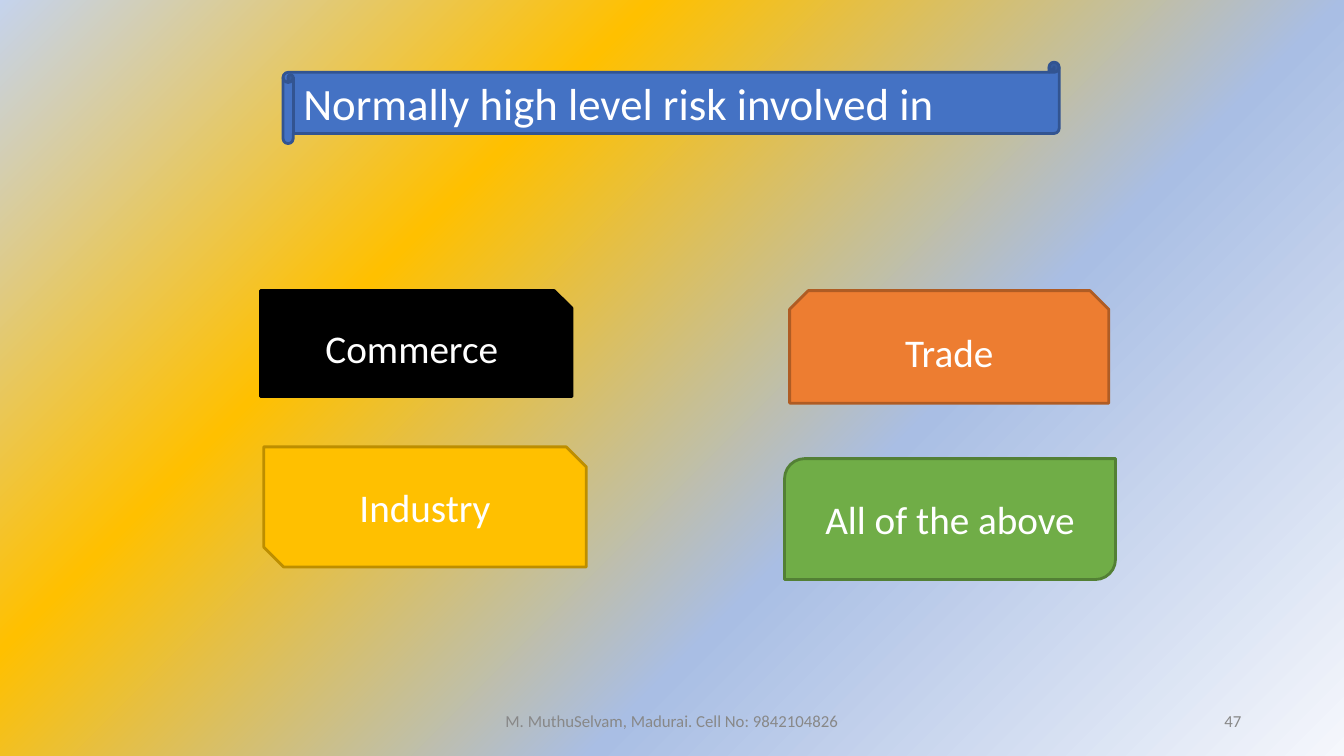
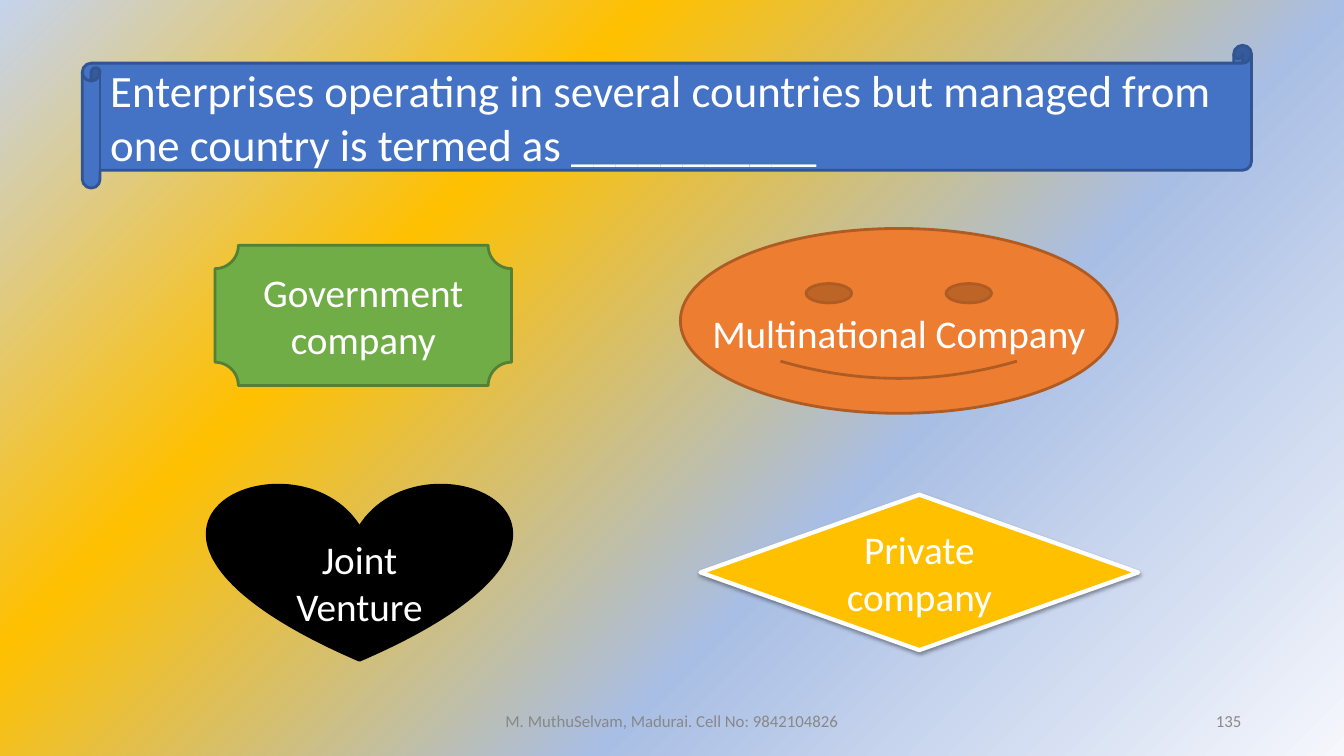
"""Build two quiz slides, each with a scroll title and four answer shapes."""
from copy import deepcopy

from lxml import etree
from pptx import Presentation
from pptx import util as u
from pptx.dml.color import RGBColor
from pptx.enum import shapes, text
from pptx.oxml.ns import nsdecls

KIND = shapes.MSO_SHAPE
ALIGN = text.PP_ALIGN
HUE = {
    "white": "FFFFFF", "black": "000000", "grey": "888888",
    "blue": "4472C4", "navy": "325491", "orange": "ED7D31", "rust": "AF5C24",
    "gold": "FFC000", "bronze": "BD8E00", "green": "70AD47", "moss": "538035",
}
BLEND = {0: "F5F7FC", 36: "A9BEE4", 69: "FFC000", 100: "C5D3ED"}
COLS, ROWS = 160, 90
CELL = u.Inches(7.5) // ROWS
FOOT = "M. MuthuSelvam, Madurai. Cell No: 9842104826"
STYLE = {
    "title": {"size": 32, "hue": "white", "align": ALIGN.LEFT},
    "answer": {"size": 28, "hue": "white", "align": ALIGN.CENTER},
    "foot": {"size": 12, "hue": "grey", "align": ALIGN.CENTER},
    "page": {"size": 12, "hue": "grey", "align": ALIGN.RIGHT},
}
FRAME = {
    "word_wrap": True, "auto_size": text.MSO_AUTO_SIZE.NONE,
    "vertical_anchor": text.MSO_ANCHOR.MIDDLE,
    "margin_left": u.Inches(0.1), "margin_right": u.Inches(0.1),
    "margin_top": u.Inches(0.05), "margin_bottom": u.Inches(0.05),
}
SLIDES = [
    {
        "page": "47", "title": "Normally high level risk involved in",
        "scroll": (33.7, 7.4, 92.4, 9.7),
        "answers": [
            ("Commerce", KIND.SNIP_1_RECTANGLE, "black", "black", 2, (31, 34.6, 37.1, 12.6), 0.05),
            ("Trade", KIND.SNIP_2_SAME_RECTANGLE, "orange", "rust", 2, (94, 34.6, 38, 13.4), 0.05),
            ("Industry", KIND.SNIP_2_DIAG_RECTANGLE, "gold", "bronze", 2, (31.4, 53.2, 38.4, 14.3), 0.05),
            ("All of the above", KIND.ROUND_2_DIAG_RECTANGLE, "green", "moss", 2, (93.4, 54.6, 39.4, 14.4), 0.05),
        ],
    },
    {
        "page": "135",
        "title": "Enterprises operating in several countries but managed from "
                 "one country is termed as ___________",
        "scroll": (9.8, 5.4, 139.2, 17),
        "answers": [
            ("Government company", KIND.PLAQUE, "green", "moss", 2, (25.6, 29.2, 35.3, 16.7), 0.05),
            ("Multinational Company", KIND.SMILEY_FACE, "orange", "rust", 2, (81, 27.2, 52, 22), 0.28),
            ("Joint Venture", KIND.HEART, "black", "black", 2, (24.8, 57.5, 36, 21.1), 0.4),
            ("Private company", KIND.DIAMOND, "gold", "white", 3, (83.4, 58.9, 52.1, 18.5), 0.05),
        ],
    },
]


def write(shape, words, style, box, top=0.05, wrap=True):
    """Place a shape on the grid and fill it with styled text."""
    for name, cells in zip(("left", "top", "width", "height"), box):
        setattr(shape, name, round(cells * CELL))
    frame = shape.text_frame
    frame.text = words
    for name, value in {**FRAME, "margin_top": u.Inches(top), "word_wrap": wrap}.items():
        setattr(frame, name, value)
    para = frame.paragraphs[0]
    para.alignment = style["align"]
    para.line_spacing = 1.0
    font = para.runs[0].font
    for name, value in {"name": "Calibri", "size": u.Pt(style["size"])}.items():
        setattr(font, name, value)
    font.color.rgb = RGBColor.from_string(HUE[style["hue"]])


def draw(slide, kind, fill, edge, width, box):
    """Add a flat preset shape at a grid box."""
    shape = slide.shapes.add_shape(kind, *(round(cells * CELL) for cells in box))
    shape.shadow.inherit = False
    shape.fill.solid()
    shape.fill.fore_color.rgb = RGBColor.from_string(HUE[fill])
    shape.line.color.rgb = RGBColor.from_string(HUE[edge])
    shape.line.width = u.Pt(width)
    return shape


deck = Presentation()
deck.slide_width, deck.slide_height = COLS * CELL, ROWS * CELL

master = deck.slide_master
master.background.fill.solid()
solid = master.element.xpath(".//p:bgPr/a:solidFill")[0]
stops = "".join(
    f'<a:gs pos="{pos * 1000}"><a:srgbClr val="{hue}"/></a:gs>' for pos, hue in BLEND.items()
)
solid.getparent().replace(solid, etree.fromstring(
    f'<a:gradFill {nsdecls("a")} rotWithShape="1"><a:gsLst>{stops}</a:gsLst>'
    '<a:path path="circle"><a:fillToRect l="100000" t="100000"/></a:path></a:gradFill>'
))

layout = deck.slide_layouts.get_by_name("Title Only")
marks = {
    shapes.PP_PLACEHOLDER.FOOTER: ("foot", (53, 83.4, 54, 4.8)),
    shapes.PP_PLACEHOLDER.SLIDE_NUMBER: ("page", (113, 83.4, 36, 4.8)),
}

for quiz in SLIDES:
    slide = deck.slides.add_slide(layout)
    tree = slide.shapes.element

    scroll = draw(slide, KIND.HORIZONTAL_SCROLL, "blue", "navy", 2, quiz["scroll"])
    tree.insert(2, scroll.element)
    left, top, width, height = quiz["scroll"]
    curl = height / 8
    write(slide.shapes.title, quiz["title"], STYLE["title"],
          (left + curl, top, width - 2 * curl, height))

    for words, kind, fill, edge, line, box, inset in quiz["answers"]:
        shape = draw(slide, kind, fill, edge, line, box)
        write(shape, words, STYLE["answer"], box, inset, kind != KIND.SMILEY_FACE)
        if kind == KIND.DIAMOND:
            shape.element.xpath("./p:spPr/a:effectLst")[0].append(etree.fromstring(
                f'<a:outerShdw {nsdecls("a")} blurRad="{u.Pt(3.1)}" dist="{u.Pt(1.6)}" '
                f'dir="5400000" rotWithShape="0"><a:srgbClr val="{HUE["black"]}">'
                '<a:alpha val="38000"/></a:srgbClr></a:outerShdw>'
            ))

    for holder in layout.placeholders:
        form = holder.placeholder_format
        if form.type in marks:
            role, box = marks[form.type]
            tree.append(deepcopy(holder.element))
            mark = next(s for s in slide.placeholders if s.placeholder_format.idx == form.idx)
            write(mark, FOOT if role == "foot" else quiz["page"], STYLE[role], box)

deck.save("out.pptx")
